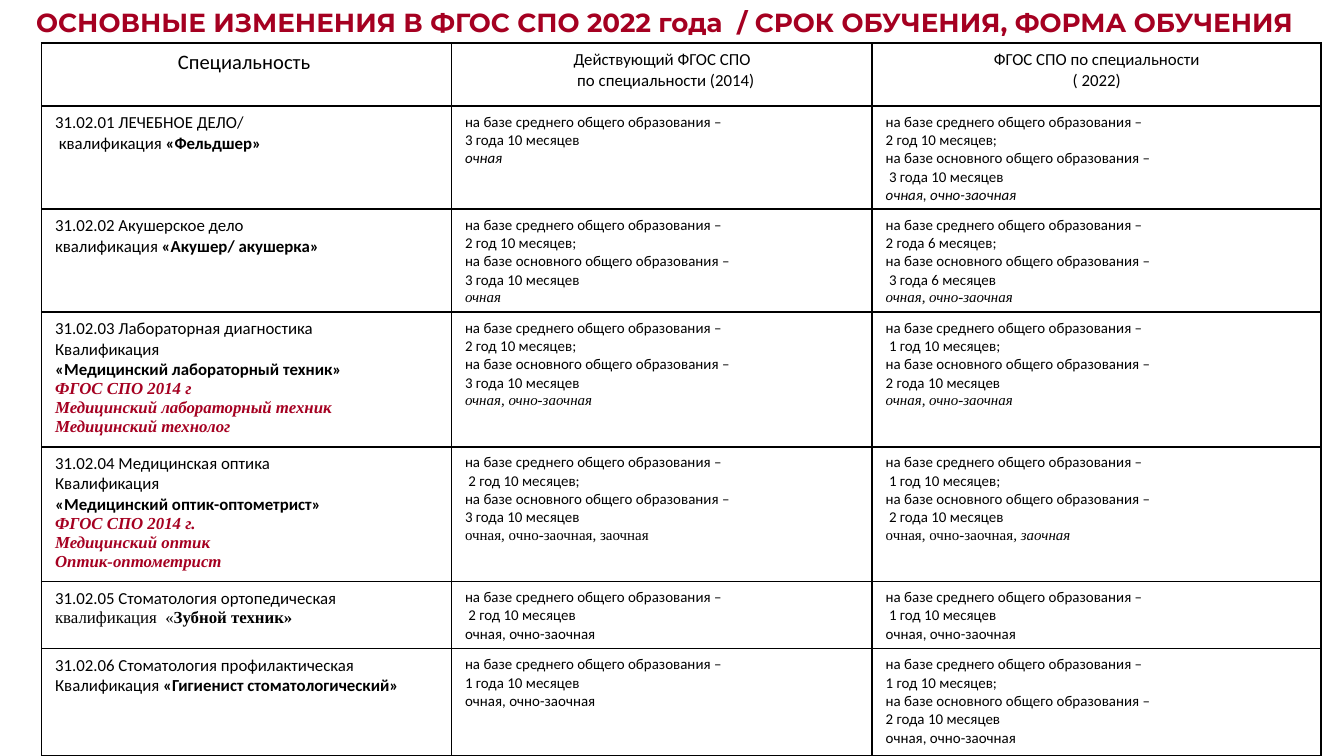
import pptx
import pptx.dml.color
import pptx.enum.text
import pptx.oxml
import pptx.oxml.ns
import pptx.util

Inches = pptx.util.Inches
Pt = pptx.util.Pt
Align = pptx.enum.text.PP_ALIGN
Anchor = pptx.enum.text.MSO_ANCHOR

COLORS = {"ink": "000000", "red": "A50021"}
FONTS = {"title": "Montserrat", "body": "Calibri", "serif": "Times New Roman"}
MIDDLE = "на базе среднего общего образования –"
BASIC = "на базе основного общего образования –"
BOTH = "очная, очно-заочная"


class Deck:
    def __init__(self, width, height):
        self.prs = pptx.Presentation()
        self.prs.slide_width = Inches(width)
        self.prs.slide_height = Inches(height)
        self.slide = self.prs.slides.add_slide(self.prs.slide_layouts[5])

    def style(self, run, size, face="body", color="ink", bold=False, italic=False):
        font = run.font
        font.size, font.name = Pt(size), FONTS[face]
        font.bold, font.italic = bold, italic
        font.color.rgb = pptx.dml.color.RGBColor.from_string(COLORS[color])

    def title(self, text, left, top, width, height):
        box = self.slide.shapes.title
        box.left, box.top = Inches(left), Inches(top)
        box.width, box.height = Inches(width), Inches(height)
        frame = box.text_frame
        frame.text = text
        frame.word_wrap = True
        frame.auto_size = pptx.enum.text.MSO_AUTO_SIZE.SHAPE_TO_FIT_TEXT
        frame.vertical_anchor = Anchor.TOP
        para = frame.paragraphs[0]
        para.alignment = Align.CENTER
        self.style(para.runs[0], 14, "title", "red", bold=True)

    def border(self, cell):
        props = cell._tc.get_or_add_tcPr()
        for pos, side in enumerate(("lnL", "lnR", "lnT", "lnB")):
            line = pptx.oxml.parse_xml(
                f'<a:{side} {pptx.oxml.ns.nsdecls("a")} w="{Pt(1)}"><a:solidFill>'
                f'<a:srgbClr val="{COLORS["ink"]}"/></a:solidFill></a:{side}>')
            props.insert(pos, line)

    def fill(self, cell, lines, size, align):
        """Each line is a string or a list of (text, marks): b, i, s(erif), r(ed)."""
        cell.fill.background()
        cell.vertical_anchor = Anchor.TOP
        self.border(cell)
        frame = cell.text_frame
        for num, line in enumerate(lines):
            para = frame.add_paragraph() if num else frame.paragraphs[0]
            para.alignment = align
            for text, marks in [(line, "")] if isinstance(line, str) else line:
                run = para.add_run()
                run.text = text
                self.style(run, size, "serif" if "s" in marks else "body",
                           "red" if "r" in marks else "ink",
                           "b" in marks, "i" in marks)

    def table(self, left, top, cols, rows, cells):
        table = self.slide.shapes.add_table(
            len(rows), len(cols), Inches(left), Inches(top),
            Inches(sum(cols)), Inches(sum(rows))).table
        table.first_row = table.horz_banding = False
        for col, width in zip(table.columns, cols):
            col.width = Inches(width)
        for row, height in zip(table.rows, rows):
            row.height = Inches(height)
        for r, row in enumerate(cells):
            for c, lines in enumerate(row):
                if r == 0:
                    size, align = (9 if c else 11), Align.CENTER
                else:
                    size, align = (8 if c else 9), Align.LEFT
                self.fill(table.cell(r, c), lines, size, align)


def term(middle, basic=None, form=BOTH, marks=""):
    """Lines of a study-term cell; form is a string or a list of runs."""
    lines = [MIDDLE, middle] + ([BASIC, basic] if basic else [])
    return lines + [[(form, marks)] if isinstance(form, str) else form]


def former(*names):
    return [[(name, "bisr")] for name in names]


# Table content
CELLS = [
    [["Специальность "],
     ["Действующий ФГОС СПО", "  по специальности (2014)"],
     [" ФГОС СПО по специальности ", "( 2022)"]],
    [["31.02.01 ЛЕЧЕБНОЕ ДЕЛО/", [(" квалификация ", ""), ("«Фельдшер»", "b")]],
     term("3 года 10 месяцев", form="очная", marks="i"),
     term("2 год 10 месяцев;", " 3 года 10 месяцев", marks="i")],
    [["31.02.02 Акушерское дело",
      [("квалификация ", ""), ("«Акушер/ акушерка»", "b")]],
     term("2 год 10 месяцев;", "3 года 10 месяцев", "очная", "is"),
     term("2 года 6 месяцев;", " 3 года 6 месяцев", marks="is")],
    [["31.02.03 Лабораторная диагностика", "Квалификация",
      [("«Медицинский лабораторный техник»", "b")],
      *former("ФГОС СПО 2014 г", "Медицинский лабораторный техник",
              "Медицинский технолог")],
     term("2 год 10 месяцев;", "3 года 10 месяцев", marks="is"),
     term(" 1 год 10 месяцев;", "2 года 10 месяцев", marks="is")],
    [["31.02.04 Медицинская оптика", "Квалификация",
      [("«Медицинский оптик-оптометрист»", "b")],
      *former("ФГОС СПО 2014 г.", "Медицинский оптик", "Оптик-оптометрист")],
     term(" 2 год 10 месяцев;", "3 года 10 месяцев", BOTH + ", заочная", "s"),
     term(" 1 год 10 месяцев;", " 2 года 10 месяцев",
          [(BOTH, "s"), (", заочная", "is")])],
    [["31.02.05 Стоматология ортопедическая",
      [("квалификация  «", "s"), ("Зубной техник»", "bs")]],
     term(" 2 год 10 месяцев"),
     term(" 1 год 10 месяцев")],
    [["31.02.06 Стоматология профилактическая",
      [("Квалификация ", ""), ("«Гигиенист стоматологический»", "b")]],
     term("1 года 10 месяцев"),
     term("1 год 10 месяцев;", "2 года 10 месяцев")],
]


def main():
    deck = Deck(10, 10 * 9 / 16)
    # Heading
    deck.title("ОСНОВНЫЕ ИЗМЕНЕНИЯ В ФГОС СПО 2022 года  / "
               "СРОК ОБУЧЕНИЯ, ФОРМА ОБУЧЕНИЯ  ", 0.05, 0, 9.91, 0.34)
    # Comparison of standards
    deck.table(0.31, 0.32, [3.05, 3.13, 3.34],
               [0.47, 0.63, 0.73, 0.83, 0.78, 0.5, 0.8], CELLS)
    deck.prs.save("out.pptx")


if __name__ == "__main__":
    main()
